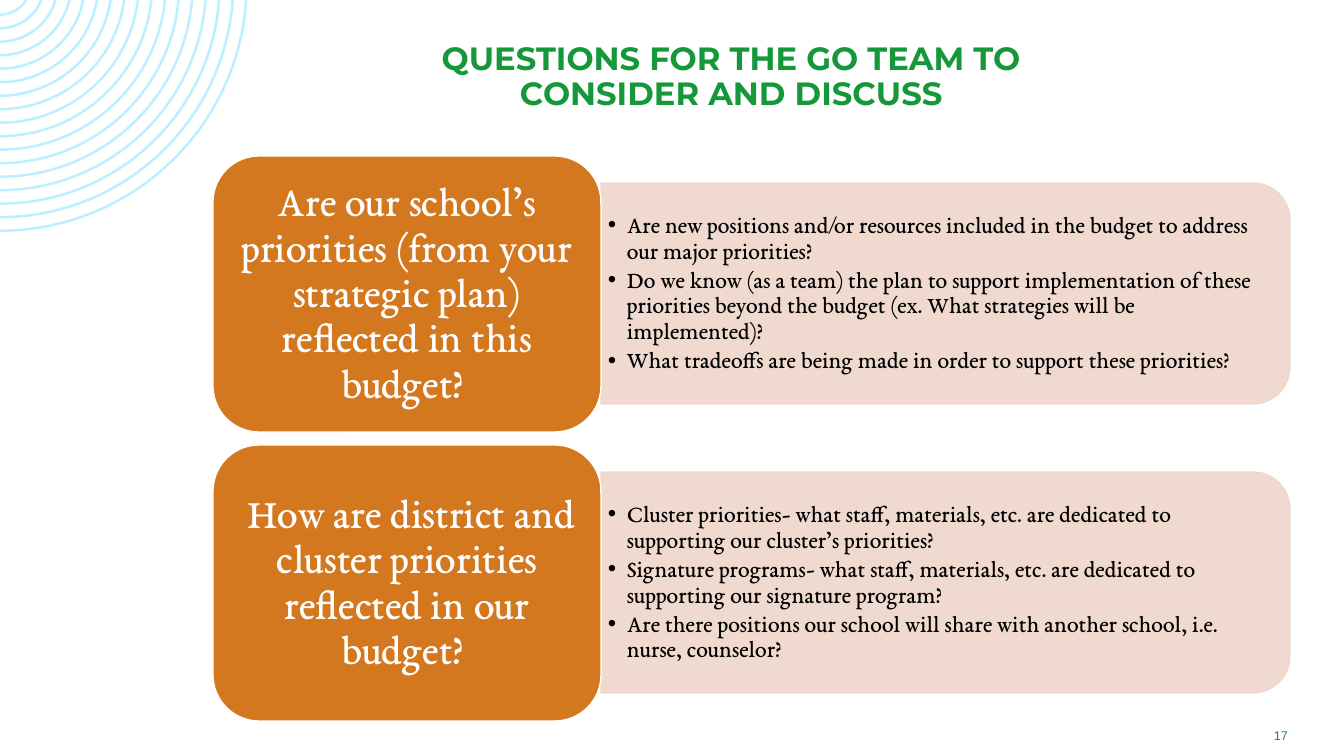
from math import acos, cos, sin, tan

from lxml.etree import SubElement
from pptx import Presentation
from pptx.dml.color import RGBColor
from pptx.enum.shapes import MSO_SHAPE as Preset
from pptx.enum.text import MSO_ANCHOR as Anchor, MSO_AUTO_SIZE as AutoSize, PP_ALIGN as Align
from pptx.oxml.ns import qn
from pptx.util import Pt

PX = 9144000 / 1008  # EMU in one px
GREEN, ORANGE, BLUSH, SKY = "159839", "D4781F", "EFD6CB", "BAF0FF"
WHITE, BLACK = "FFFFFF", "000000"
SERIF = "EB Garamond"
CORNER = 0.167
FIRST_ROW, ROW_PITCH = 156, 289
CARD_LEFT, CARD_WIDTH, CARD_HEIGHT = 213, 388, 276
PANEL_LEFT, PANEL_WIDTH, PANEL_HEIGHT = 601, 689, 221

ROWS = [
    ("Are our school’s priorities (from your strategic plan) reflected in this budget? ", [
        "Are new positions and/or resources included in the budget to address our major priorities?",
        "Do we know (as a team) the plan to support implementation of these priorities "
        "beyond the budget (ex. What strategies will be implemented)?",
        "What tradeoffs are being made in order to support these priorities?",
    ]),
    (" How are district and cluster priorities reflected in our budget? ", [
        "Cluster priorities- what staff, materials, etc. are dedicated to "
        "supporting our cluster’s priorities?",
        "Signature programs- what staff, materials, etc. are dedicated to "
        "supporting our signature program?",
        "Are there positions our school will share with another school, i.e. nurse, counselor?",
    ]),
]


def px(*lengths):
    return [round(length * PX) for length in lengths]


def color(hex_text):
    return RGBColor.from_string(hex_text)


def paint(shape, fill, line=None):
    shape.shadow.inherit = False
    shape.fill.solid()
    shape.fill.fore_color.rgb = color(fill)
    if line:
        shape.line.color.rgb = color(line)
        shape.line.width = Pt(1)
    else:
        shape.line.fill.background()


def write(shape, lines, size, font, hex_text, align, anchor=Anchor.MIDDLE, bold=False, margins=(10, 5)):
    """Fill the shape with one paragraph per line and return its paragraphs."""
    frame = shape.text_frame
    frame.text = "\n".join(lines)
    frame.word_wrap = True
    frame.auto_size = AutoSize.NONE
    frame.vertical_anchor = anchor
    frame.margin_left = frame.margin_right = px(margins[0])[0]
    frame.margin_top = frame.margin_bottom = px(margins[1])[0]
    for para in frame.paragraphs:
        para.alignment = align
        para.line_spacing = 0.9
        for span in para.runs:
            span.font.size = Pt(size)
            span.font.name = font
            span.font.bold = bold
            span.font.color.rgb = color(hex_text)
    return frame.paragraphs


def arc_points(radius, center_y):
    """Return the Bézier points of an arc from the top edge down to the left edge."""
    sweep = acos(-center_y / radius)
    reach = radius * tan(sweep / 4) * 4 / 3
    x, bottom = radius * sin(sweep), center_y + radius
    points = [(x, 0), (x - reach * cos(sweep), reach * sin(sweep)), (reach, bottom), (0, bottom)]
    return [px(*point) for point in points]


def bend(segments):
    """Turn three straight segments into one curve through their points."""
    first = segments[0]
    first.tag = qn("a:cubicBezTo")
    for segment in segments[1:]:
        first.append(segment[0])
        segment.getparent().remove(segment)


def add_rings(page):
    """Draw concentric bands around a point just above the top left corner."""
    builder = page.shapes.build_freeform(0, 0)
    for ring in range(17):
        outer = 248 - 13.5 * ring
        band = arc_points(outer, -16) + arc_points(outer - 2.5, -16)[::-1]
        builder.move_to(*band[0])
        builder.add_line_segments(band[1:], close=True)
    rings = builder.convert_to_shape()
    segments = list(rings._element.iter(qn("a:lnTo")))
    closing = 7  # segments in one band: curve, edge, curve
    for start in range(0, len(segments) - closing + 1, closing):
        bend(segments[start:start + 3])
        bend(segments[start + 4:start + 7])
    paint(rings, SKY)


def add_title(page, text):
    title = page.shapes.title
    title.left, title.top, title.width, title.height = px(350, 38, 763, 85)
    write(title, [text], 23, "Montserrat", GREEN, Align.CENTER, Anchor.TOP, bold=True)


def add_bullet(para):
    props = para._p.get_or_add_pPr()
    indent = px(19)[0]
    props.set("marL", str(indent))
    props.set("indent", str(-indent))
    SubElement(props, qn("a:buFont"), typeface="Arial")
    SubElement(props, qn("a:buChar"), char="•")


def add_panel(page, top, points):
    """Add a panel rounded on its right side, with a bulleted list over it."""
    shift = (PANEL_WIDTH - PANEL_HEIGHT) / 2
    panel = page.shapes.add_shape(
        Preset.ROUND_2_SAME_RECTANGLE,
        *px(PANEL_LEFT + shift, top - shift, PANEL_HEIGHT, PANEL_WIDTH))
    panel.rotation = 90
    panel.adjustments[0], panel.adjustments[1] = CORNER, 0
    paint(panel, BLUSH, BLUSH)
    for tint in panel._element.spPr.iter(qn("a:srgbClr")):
        SubElement(tint, qn("a:alpha"), val="90000")

    box = page.shapes.add_textbox(*px(PANEL_LEFT, top + 11, 679, 199))
    paras = write(box, points, 17, SERIF, BLACK, Align.LEFT, margins=(7, 4))
    for index, para in enumerate(paras):
        para.level = 1
        para.space_before = Pt(2.5 if index else 0)
        add_bullet(para)


def add_card(page, top, question):
    card = page.shapes.add_shape(
        Preset.ROUNDED_RECTANGLE, *px(CARD_LEFT, top, CARD_WIDTH, CARD_HEIGHT))
    card.adjustments[0] = CORNER
    paint(card, ORANGE, WHITE)
    write(card, [question], 30, SERIF, WHITE, Align.CENTER, margins=(12, 6))


def main():
    deck = Presentation()
    deck.slide_width, deck.slide_height = px(1344, 756)
    page = deck.slides.add_slide(deck.slide_layouts[5])
    add_rings(page)
    add_title(page, "QUESTIONS FOR THE GO TEAM TO CONSIDER AND DISCUSS")
    for row, (question, points) in enumerate(ROWS):
        top = FIRST_ROW + row * ROW_PITCH
        add_panel(page, top + (CARD_HEIGHT - PANEL_HEIGHT) // 2, points)
        add_card(page, top, question)
    number = page.shapes.add_textbox(*px(1240, 721, 82, 30))
    write(number, ["17"], 9, "Arial", GREEN, Align.CENTER)
    deck.save("out.pptx")


if __name__ == "__main__":
    main()
